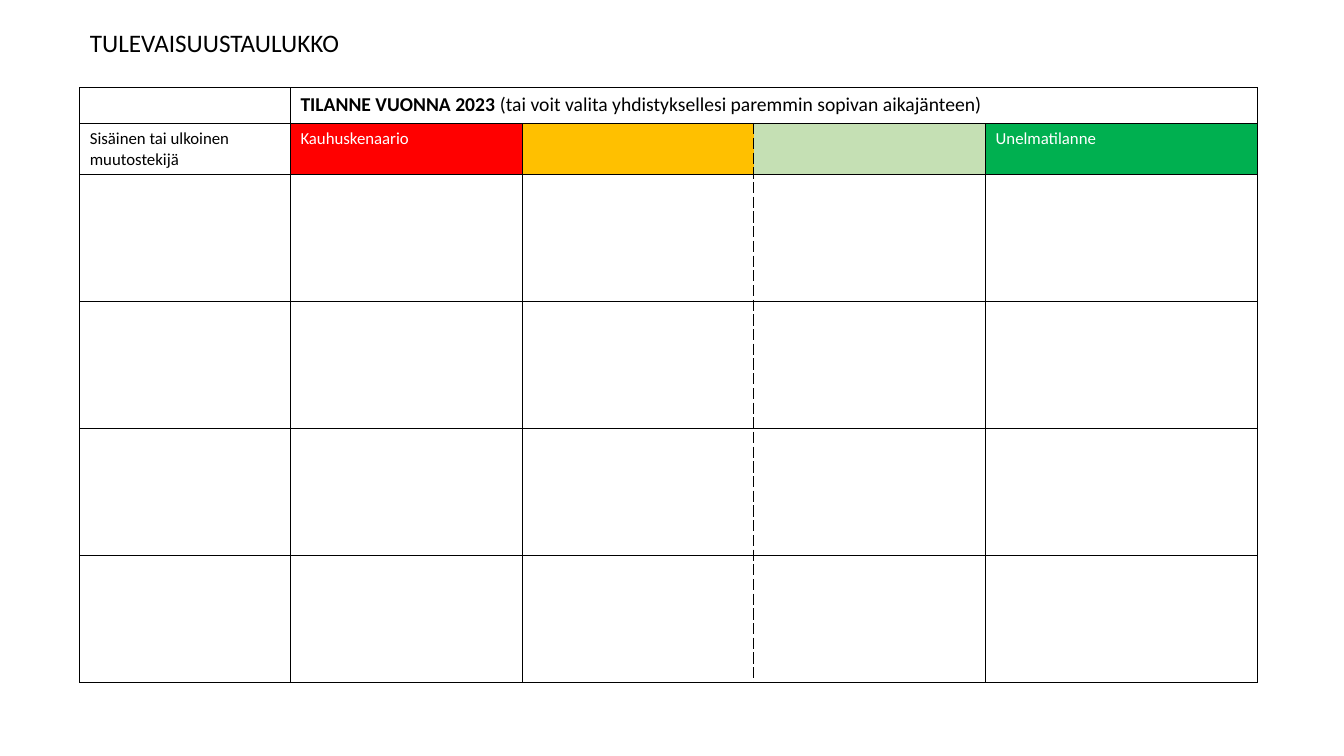
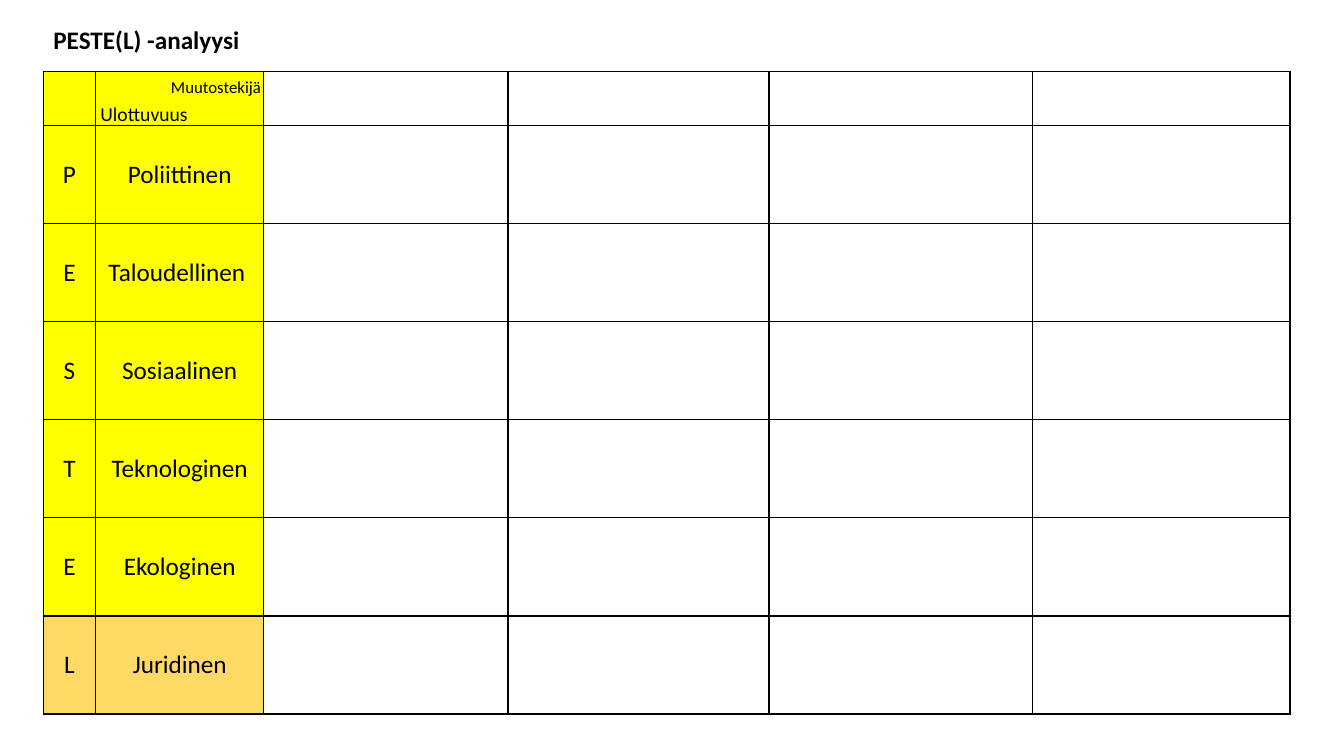
from lxml import etree
from pptx import Presentation
from pptx.dml.color import RGBColor
from pptx.enum import text as t
from pptx.oxml import ns
from pptx.util import Cm, Pt

FONT = "Calibri"
BLACK, WHITE = "000000", "FFFFFF"
YELLOW, SAND = "FFFF00", "FFD966"
SCALE = ["FF0000", "FFC000", "C5E0B4", "00B050"]
PESTEL = [("P", "Poliittinen"), ("E", "Taloudellinen "), ("S", "Sosiaalinen"),
          ("T", "Teknologinen"), ("E", "Ekologinen"), ("L", "Juridinen")]


def rgb(value):
    return RGBColor.from_string(value)


def add_run(p, text, size, bold=False, color=BLACK):
    r = p.add_run()
    r.text = text
    r.font.name = FONT
    r.font.size = Pt(size)
    r.font.bold = bold
    r.font.color.rgb = rgb(color)


def add_slide(prs, title, box, bold=False):
    s = prs.slides.add_slide(prs.slide_layouts[5])
    sp = s.shapes.title
    sp.left, sp.top, sp.width, sp.height = map(Cm, box)
    tf = sp.text_frame
    tf.word_wrap = False
    tf.auto_size = t.MSO_AUTO_SIZE.SHAPE_TO_FIT_TEXT
    tf.vertical_anchor = t.MSO_ANCHOR.TOP
    p = tf.paragraphs[0]
    p.alignment = t.PP_ALIGN.LEFT
    add_run(p, title, 18, bold)
    return s


def add_label(s, text, size, left, top, width, height):
    tf = s.shapes.add_textbox(Cm(left), Cm(top), Cm(width), Cm(height)).text_frame
    tf.word_wrap = False
    tf.auto_size = t.MSO_AUTO_SIZE.SHAPE_TO_FIT_TEXT
    add_run(tf.paragraphs[0], text, size)


def set_borders(cell, dashed=""):
    tc_pr = cell._tc.get_or_add_tcPr()
    for i, side in enumerate("LRTB"):
        ln = etree.Element(ns.qn(f"a:ln{side}"), w=str(Pt(1)))
        fill = etree.SubElement(ln, ns.qn("a:solidFill"))
        etree.SubElement(fill, ns.qn("a:srgbClr"), val=BLACK)
        dash = "dash" if side in dashed else "solid"
        etree.SubElement(ln, ns.qn("a:prstDash"), val=dash)
        tc_pr.insert(i, ln)


def set_fill(cell, color):
    cell.fill.solid()
    cell.fill.fore_color.rgb = rgb(color)


def add_grid(s, left, top, cols, rows, dashed_after=None):
    frame = s.shapes.add_table(len(rows), len(cols), Cm(left), Cm(top),
                               Cm(sum(cols)), Cm(sum(rows)))
    table = frame.table
    table.first_row = table.horz_banding = False
    for col, width in zip(table.columns, cols):
        col.width = Cm(width)
    for i, (row, height) in enumerate(zip(table.rows, rows)):
        row.height = Cm(height)
        for j, cell in enumerate(row.cells):
            cell.fill.background()
            dashed = ""
            if dashed_after is not None and i > 0:
                dashed = {dashed_after: "R", dashed_after + 1: "L"}.get(j, "")
            set_borders(cell, dashed)
            p = cell.text_frame.paragraphs[0]
            etree.SubElement(p._p, ns.qn("a:endParaRPr"), sz="1200")
    return table


def first_paragraph(cell):
    return cell.text_frame.paragraphs[0]


def future_slide(prs, left, top):
    s = add_slide(prs, "TULEVAISUUSTAULUKKO", (left, top - 1.65, 7.01, 1.02))
    table = add_grid(s, left, top, [5.31] + [5.84] * 3 + [6.86],
                     [0.91, 1.28] + [3.2] * 4, dashed_after=2)
    heading = table.cell(0, 1)
    heading.merge(table.cell(0, 4))
    p = first_paragraph(heading)
    add_run(p, "TILANNE VUONNA 2023 ", 14, True)
    add_run(p, "(tai voit valita yhdistyksellesi paremmin sopivan aikajänteen)", 14)
    add_run(first_paragraph(table.cell(1, 0)), "Sisäinen tai ulkoinen muutostekijä", 12)
    for j, color in enumerate(SCALE, 1):
        set_fill(table.cell(1, j), color)
    for j, name in ((1, "Kauhuskenaario"), (4, "Unelmatilanne")):
        add_run(first_paragraph(table.cell(1, j)), name, 12, color=WHITE)


def pestel_slide(prs, left, top):
    s = add_slide(prs, "PESTE(L) -analyysi", (left, top - 1.32, 5.26, 1.02), True)
    table = add_grid(s, left, top, [1.32, 4.24, 6.15, 6.58, 6.65, 6.48],
                     [1.37] + [2.47] * 6)
    for i, names in enumerate([("", "")] + PESTEL):
        for j, name in enumerate(names):
            cell = table.cell(i, j)
            set_fill(cell, SAND if i == len(PESTEL) else YELLOW)
            if name:
                cell.vertical_anchor = t.MSO_ANCHOR.MIDDLE
                p = first_paragraph(cell)
                p.alignment = t.PP_ALIGN.CENTER
                add_run(p, name, 18)
    add_label(s, "Ulottuvuus", 14, left + 1.19, top + 0.64, 2.74, 0.86)
    add_label(s, "Muutostekijä", 12, left + 2.97, top, 2.79, 0.76)


def main():
    prs = Presentation()
    prs.slide_width, prs.slide_height = Cm(33.87), Cm(19.05)
    future_slide(prs, 2.01, 2.21)
    pestel_slide(prs, 1.09, 1.8)
    prs.save("out.pptx")


if __name__ == "__main__":
    main()
